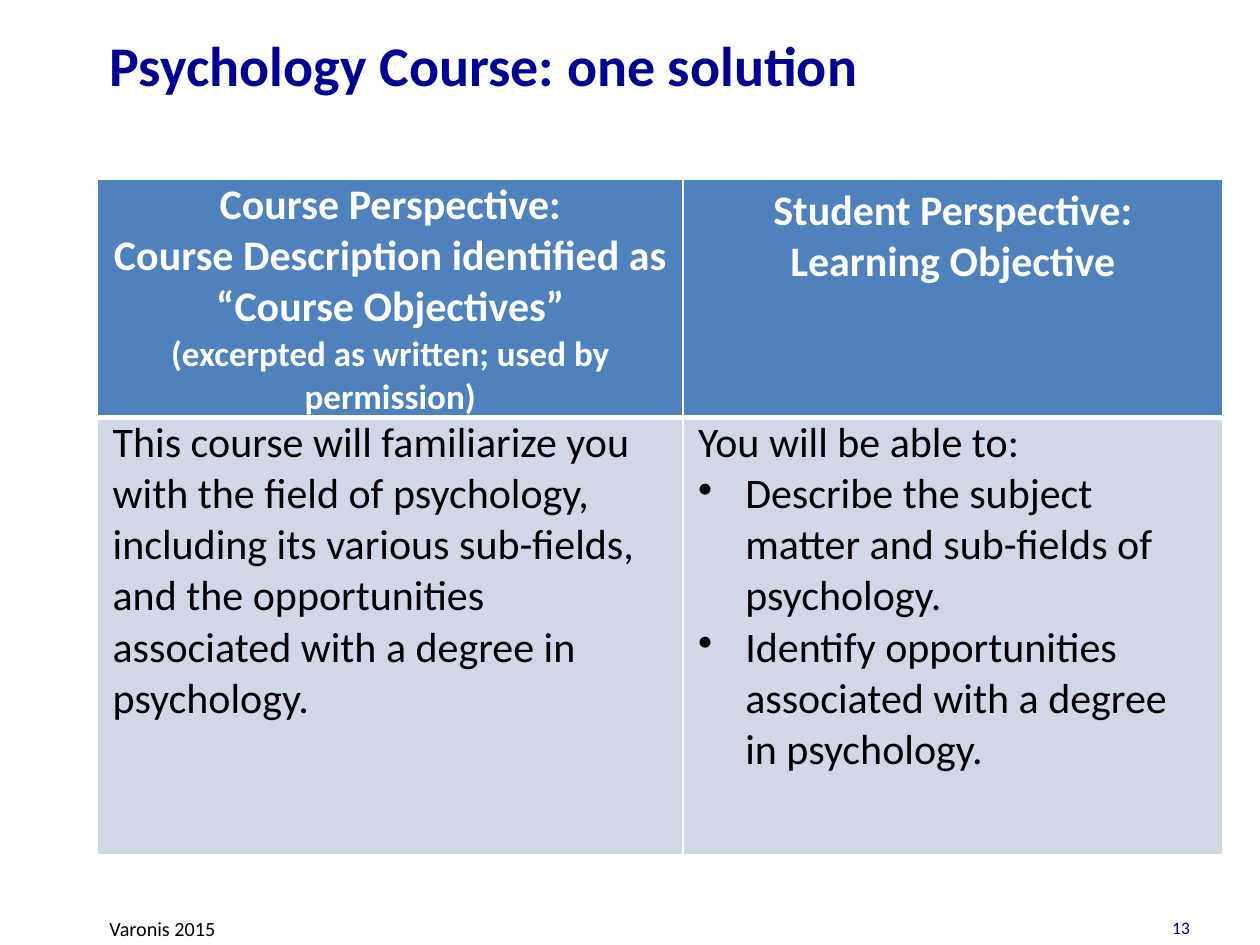
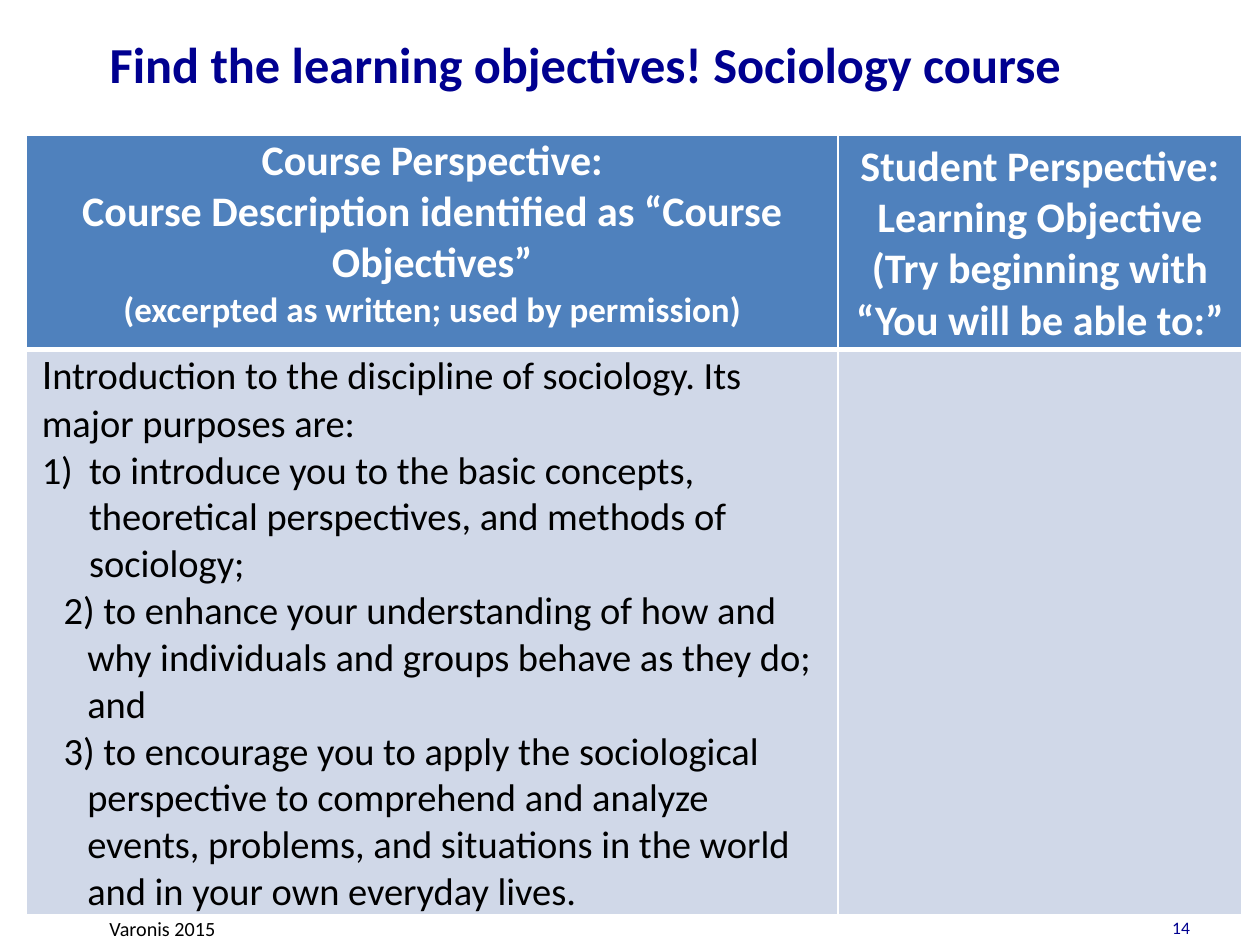
from dataclasses import dataclass

from lxml import etree
from pptx import Presentation
from pptx.dml.color import RGBColor
from pptx.enum.text import MSO_ANCHOR, MSO_AUTO_SIZE, PP_ALIGN
from pptx.oxml.ns import qn
from pptx.util import Pt

LEFT, CENTER, RIGHT = PP_ALIGN.LEFT, PP_ALIGN.CENTER, PP_ALIGN.RIGHT
TOP, MIDDLE = MSO_ANCHOR.TOP, MSO_ANCHOR.MIDDLE
NO_FIT = MSO_AUTO_SIZE.NONE


@dataclass(frozen=True)
class Theme:
    """Colours, font and type sizes shared by the slides."""
    font: str = "Calibri"
    navy: str = "000090"
    black: str = "000000"
    white: str = "FFFFFF"
    header: str = "4F81BD"
    body: str = "D0D8E8"
    title: float = 32
    long_title: float = 28.8
    large: float = 24
    list: float = 22
    note: float = 20
    footer: float = 11.5
    number: float = 10


T = Theme()
TITLE_BOX = (55.5, 3.5, 664.5, 66)
FOOTER_BOX = (55.5, 520, 604, 21)
NUMBER_BOX = (659.5, 520.5, 27.5, 19.5)
TIGHT = (8.64, 0)
NORMAL = (7.2, 3.6)
BULLET = ("buChar", "char", "•")
NUMBERED = ("buAutoNum", "type", "arabicParenR")
HANGING = (27, -27)
SHALLOW = (26, -13.5)


def para(text, size=T.large, indent=None, bullet=None):
    """Describe a paragraph of one run."""
    return [(text, size)], indent, bullet


def add_run(p, text, size, color, bold=False):
    """Add one formatted run to a paragraph."""
    r = p.add_run()
    r.text = text
    r.font.name, r.font.size, r.font.bold = T.font, Pt(size), bold
    r.font.color.rgb = RGBColor.from_string(color)


def format_indent(p, indent, bullet):
    """Give a paragraph its left margin, hanging indent and bullet."""
    pPr = p._p.get_or_add_pPr()
    pPr.set("marL", str(Pt(indent[0])))
    pPr.set("indent", str(Pt(indent[1])))
    if bullet:
        tag, key, value = bullet
        etree.SubElement(pPr, qn(f"a:{tag}")).set(key, value)


def write_paragraphs(tf, paragraphs, color, bold, align):
    """Fill a text frame from paragraph descriptions."""
    for i, (runs, indent, bullet) in enumerate(paragraphs):
        p = tf.paragraphs[0] if i == 0 else tf.add_paragraph()
        if indent:
            format_indent(p, indent, bullet)
        p.alignment = align
        for text, size in runs:
            add_run(p, text, size, color, bold)


def add_label(s, box, text, size, color, align, anchor):
    """Add a one-line text box."""
    tf = s.shapes.add_textbox(*map(Pt, box)).text_frame
    tf.word_wrap = True
    tf.vertical_anchor = anchor
    write_paragraphs(tf, [para(text, size)], color, False, align)


def set_title(s, box, text, size):
    """Place and format the title placeholder."""
    sp = s.shapes.title
    sp.left, sp.top, sp.width, sp.height = map(Pt, box)
    tf = sp.text_frame
    tf.auto_size, tf.vertical_anchor, tf.word_wrap = NO_FIT, MIDDLE, True
    write_paragraphs(tf, [para(text, size)], T.navy, True, LEFT)


def set_borders(cell, is_header):
    """Draw white cell borders with a thick rule under the header."""
    tcPr = cell._tc.get_or_add_tcPr()
    thick = "B" if is_header else "T"
    for side in "LRTB":
        ln = etree.SubElement(tcPr, qn(f"a:ln{side}"), w=str(Pt(3 if side == thick else 1)))
        fill = etree.SubElement(ln, qn("a:solidFill"))
        etree.SubElement(fill, qn("a:srgbClr"), val=T.white)


def fill_cell(cell, paragraphs, is_header, margins):
    """Format one table cell and write its text."""
    set_borders(cell, is_header)
    cell.fill.solid()
    cell.fill.fore_color.rgb = RGBColor.from_string(T.header if is_header else T.body)
    cell.margin_left = cell.margin_right = Pt(margins[0])
    cell.margin_top = cell.margin_bottom = Pt(margins[1])
    cell.vertical_anchor = TOP
    color, align = (T.white, CENTER) if is_header else (T.black, LEFT)
    write_paragraphs(cell.text_frame, paragraphs, color, is_header, align)


def add_perspectives(s, origin, widths, heights, student_extra, course, student):
    """Add the table that sets the course view beside the student view."""
    headers = (
        [para("Course Perspective:"),
         para("Course Description identified as “Course Objectives”"),
         para("(excerpted as written; used by permission)", T.note)],
        [para("Student Perspective:"), para("Learning Objective"), *student_extra],
    )
    box = (*origin, sum(widths), sum(heights))
    table = s.shapes.add_table(2, 2, *map(Pt, box)).table
    for column, width in zip(table.columns, widths):
        column.width = Pt(width)
    for row, height in zip(table.rows, heights):
        row.height = Pt(height)
    for r, contents in enumerate((headers, (course, student))):
        for c, paragraphs in enumerate(contents):
            margins = NORMAL if (r, c) == (0, 1) else TIGHT
            fill_cell(table.cell(r, c), paragraphs, r == 0, margins)


def add_course_slide(prs, number, title, size, **perspectives):
    """Add a titled slide with a perspectives table, footer and number."""
    s = prs.slides.add_slide(prs.slide_layouts[5])
    add_label(s, FOOTER_BOX, "Varonis 2015", T.footer, T.black, LEFT, TOP)
    set_title(s, TITLE_BOX, title, size)
    add_perspectives(s, **perspectives)
    add_label(s, NUMBER_BOX, str(number), T.number, T.navy, RIGHT, MIDDLE)


def main():
    """Build and save the presentation."""
    prs = Presentation()
    prs.slide_width, prs.slide_height = Pt(720), Pt(540)
    add_course_slide(
        prs, 13, "Psychology Course: one solution", T.title,
        origin=(55.75, 102.5), widths=(334.5, 308.5), heights=(136, 250),
        student_extra=[],
        course=[para("This course will familiarize you with the field of psychology, "
                     "including its various sub-fields, and the opportunities "
                     "associated with a degree in psychology.")],
        student=[
            para("You will be able to:"),
            para("Describe the subject matter and sub-fields of psychology.",
                 indent=HANGING, bullet=BULLET),
            para("Identify opportunities associated with a degree in psychology.",
                 indent=HANGING, bullet=BULLET)],
    )
    add_course_slide(
        prs, 14, "Find the learning objectives! Sociology course", T.long_title,
        origin=(15.25, 77.25), widths=(463.5, 231), heights=(122.5, 323),
        student_extra=[para("(Try beginning with “You will be able to:”")],
        course=[
            ([("I", T.large),
              ("ntroduction to the discipline of sociology. Its major purposes are:", T.list)],
             None, None),
            para("to introduce you to the basic concepts, theoretical perspectives, "
                 "and methods of sociology;", T.list, HANGING, NUMBERED),
            para("2) to enhance your understanding of how and why individuals and "
                 "groups behave as they do; and", T.list, SHALLOW),
            para("3) to encourage you to apply the sociological perspective to "
                 "comprehend and analyze events, problems, and situations in the "
                 "world and in your own everyday lives.", T.list, SHALLOW)],
        student=[],
    )
    prs.save("out.pptx")


if __name__ == "__main__":
    main()
